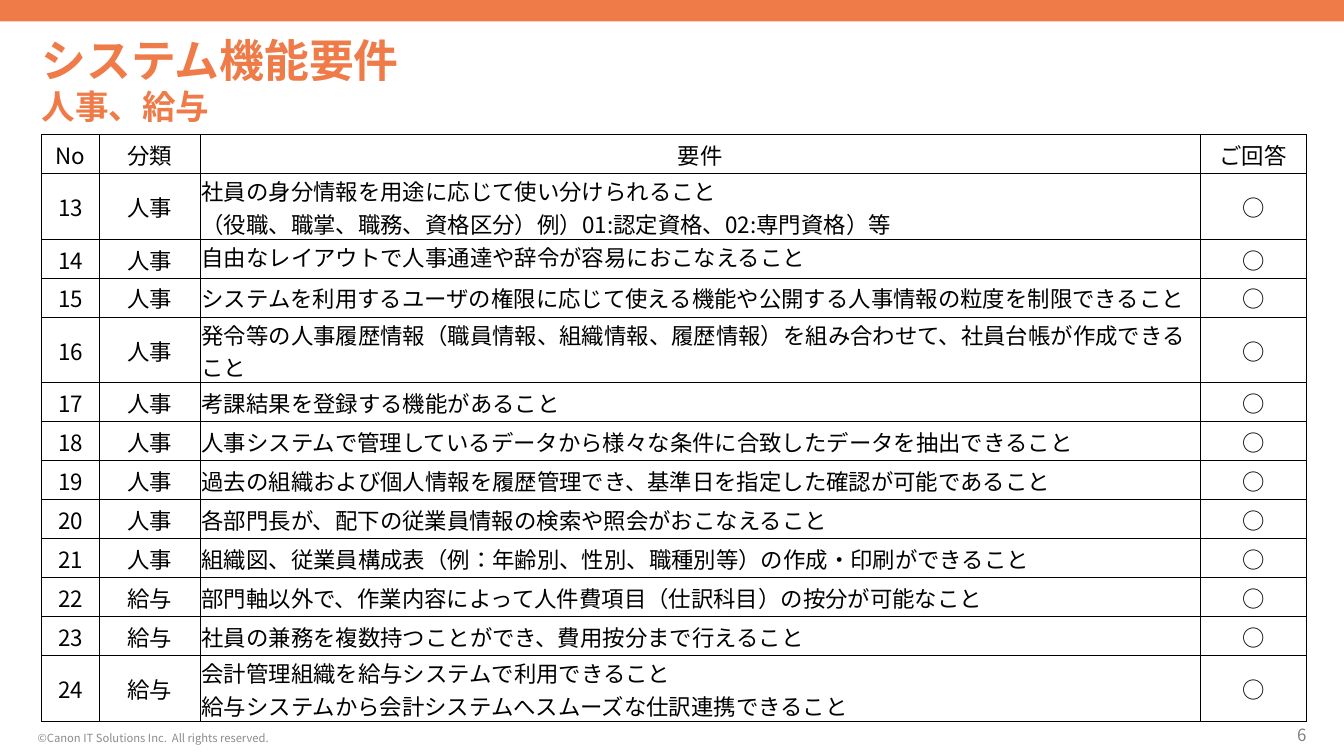
from typing import NamedTuple

from lxml import etree
from pptx import Presentation
from pptx.dml.color import RGBColor
from pptx.enum.lang import MSO_LANGUAGE_ID
from pptx.enum.shapes import MSO_SHAPE
from pptx.enum.text import MSO_ANCHOR, PP_ALIGN
from pptx.oxml.ns import qn
from pptx.util import Inches, Pt

RECT = MSO_SHAPE.RECTANGLE
JAPANESE = MSO_LANGUAGE_ID.JAPANESE
TOP, MIDDLE, BOTTOM = MSO_ANCHOR.TOP, MSO_ANCHOR.MIDDLE, MSO_ANCHOR.BOTTOM
LEFT, CENTER, RIGHT = PP_ALIGN.LEFT, PP_ALIGN.CENTER, PP_ALIGN.RIGHT

FONT = "Noto Sans CJK JP"
COLORS = {"accent": "EE7B48", "page": "808080", "copyright": "8C8C8C", "text": "000000"}
SLIDE_WIDTH = 10
SLIDE_HEIGHT = SLIDE_WIDTH * 9 / 16
COL_WIDTHS = (0.43, 0.75, 7.44, 0.79)
ROW_HEIGHT = 0.29
TALL_ROW = 0.49
HEADERS = ("No", "分類", "要件", "ご回答")
FIRST_NO = 13
ANSWER = "○"


class Line(NamedTuple):
    text: str
    size: float
    color: str
    bold: bool = False


class Label(NamedTuple):
    box: tuple[float, float, float, float]
    lines: tuple[Line, ...]
    align: PP_ALIGN = LEFT
    anchor: MSO_ANCHOR = BOTTOM


class Requirement(NamedTuple):
    category: str
    text: str
    height: float = ROW_HEIGHT
    anchor: MSO_ANCHOR = MIDDLE


LABELS = (
    Label((9.33, 5.39, 0.39, 0.15), (Line("6", 9, "page"),), RIGHT),
    Label((0.28, 5.39, 2.36, 0.15),
          (Line("©Canon IT Solutions Inc.  All rights reserved.", 6, "copyright"),)),
    Label((0.31, 0.24, 7.87, 0.39),
          (Line("システム機能要件", 24, "accent", True), Line("人事、給与", 18, "accent", True)),
          anchor=TOP),
)

REQUIREMENTS = (
    Requirement("人事", "社員の身分情報を用途に応じて使い分けられること\n"
                "（役職、職掌、職務、資格区分）例）01:認定資格、02:専門資格）等", TALL_ROW),
    Requirement("人事", "自由なレイアウトで人事通達や辞令が容易におこなえること", anchor=TOP),
    Requirement("人事", "システムを利用するユーザの権限に応じて使える機能や公開する人事情報の粒度を制限できること"),
    Requirement("人事", "発令等の人事履歴情報（職員情報、組織情報、履歴情報）を組み合わせて、社員台帳が作成できること",
                TALL_ROW),
    Requirement("人事", "考課結果を登録する機能があること"),
    Requirement("人事", "人事システムで管理しているデータから様々な条件に合致したデータを抽出できること"),
    Requirement("人事", "過去の組織および個人情報を履歴管理でき、基準日を指定した確認が可能であること"),
    Requirement("人事", "各部門長が、配下の従業員情報の検索や照会がおこなえること"),
    Requirement("人事", "組織図、従業員構成表（例：年齢別、性別、職種別等）の作成・印刷ができること"),
    Requirement("給与", "部門軸以外で、作業内容によって人件費項目（仕訳科目）の按分が可能なこと"),
    Requirement("給与", "社員の兼務を複数持つことができ、費用按分まで行えること"),
    Requirement("給与", "会計管理組織を給与システムで利用できること\n"
                "給与システムから会計システムへスムーズな仕訳連携できること", TALL_ROW),
)


def write_lines(p, lines: tuple[Line, ...], align: PP_ALIGN) -> None:
    p.alignment = align
    for i, line in enumerate(lines):
        if i:
            p.add_line_break()
        r = p.add_run()
        r.text = line.text
        r.font.size = Pt(line.size)
        r.font.bold = line.bold
        r.font.language_id = JAPANESE
        r.font.color.rgb = RGBColor.from_string(COLORS[line.color])
        r.font.name = FONT
        ea = etree.Element(qn("a:ea"), typeface=FONT)
        r.font._element.find(qn("a:latin")).addnext(ea)


def add_label(slide, label: Label) -> None:
    tf = slide.shapes.add_textbox(*map(Inches, label.box)).text_frame
    tf.word_wrap = True
    tf.vertical_anchor = label.anchor
    tf.margin_left = tf.margin_right = tf.margin_top = tf.margin_bottom = 0
    write_lines(tf.paragraphs[0], label.lines, label.align)


def set_borders(cell) -> None:
    tc_pr = cell._tc.get_or_add_tcPr()
    for i, side in enumerate(("lnL", "lnR", "lnT", "lnB")):
        ln = etree.Element(qn(f"a:{side}"), w=str(Pt(0.5)))
        fill = etree.SubElement(ln, qn("a:solidFill"))
        etree.SubElement(fill, qn("a:srgbClr"), val=COLORS["text"])
        tc_pr.insert(i, ln)


def fill_cell(cell, text: str, align: PP_ALIGN, anchor: MSO_ANCHOR) -> None:
    cell.fill.background()
    set_borders(cell)
    cell.margin_left = cell.margin_right = cell.margin_top = Inches(0.01)
    cell.margin_bottom = 0
    cell.vertical_anchor = anchor
    lines = tuple(Line(part, 12, "text") for part in text.split("\n"))
    write_lines(cell.text_frame.paragraphs[0], lines, align)


def add_requirements(slide) -> None:
    heights = (ROW_HEIGHT, *(req.height for req in REQUIREMENTS))
    frame = slide.shapes.add_table(len(heights), len(COL_WIDTHS), Inches(0.31), Inches(1),
                                   Inches(sum(COL_WIDTHS)), Inches(sum(heights)))
    table = frame.table
    table.first_row = table.horz_banding = False
    for col, width in zip(table.columns, COL_WIDTHS):
        col.width = Inches(width)
    for row, height in zip(table.rows, heights):
        row.height = Inches(height)
    for c, header in enumerate(HEADERS):
        fill_cell(table.cell(0, c), header, CENTER, MIDDLE)
    for i, req in enumerate(REQUIREMENTS):
        values = (str(FIRST_NO + i), req.category, req.text, ANSWER)
        for c, value in enumerate(values):
            is_text = HEADERS[c] == "要件"
            fill_cell(table.cell(i + 1, c), value, LEFT if is_text else CENTER,
                      req.anchor if is_text else MIDDLE)


def add_top_bar(slide) -> None:
    sp = slide.shapes.add_shape(RECT, 0, 0, Inches(SLIDE_WIDTH), Inches(0.16))
    sp.shadow.inherit = False
    sp.fill.solid()
    sp.fill.fore_color.rgb = RGBColor.from_string(COLORS["accent"])
    sp.line.fill.background()


def main() -> None:
    prs = Presentation()
    prs.slide_width, prs.slide_height = Inches(SLIDE_WIDTH), Inches(SLIDE_HEIGHT)
    s = prs.slides.add_slide(prs.slide_layouts[6])
    add_top_bar(s)
    for label in LABELS:
        add_label(s, label)
    add_requirements(s)
    prs.save("out.pptx")


if __name__ == "__main__":
    main()
